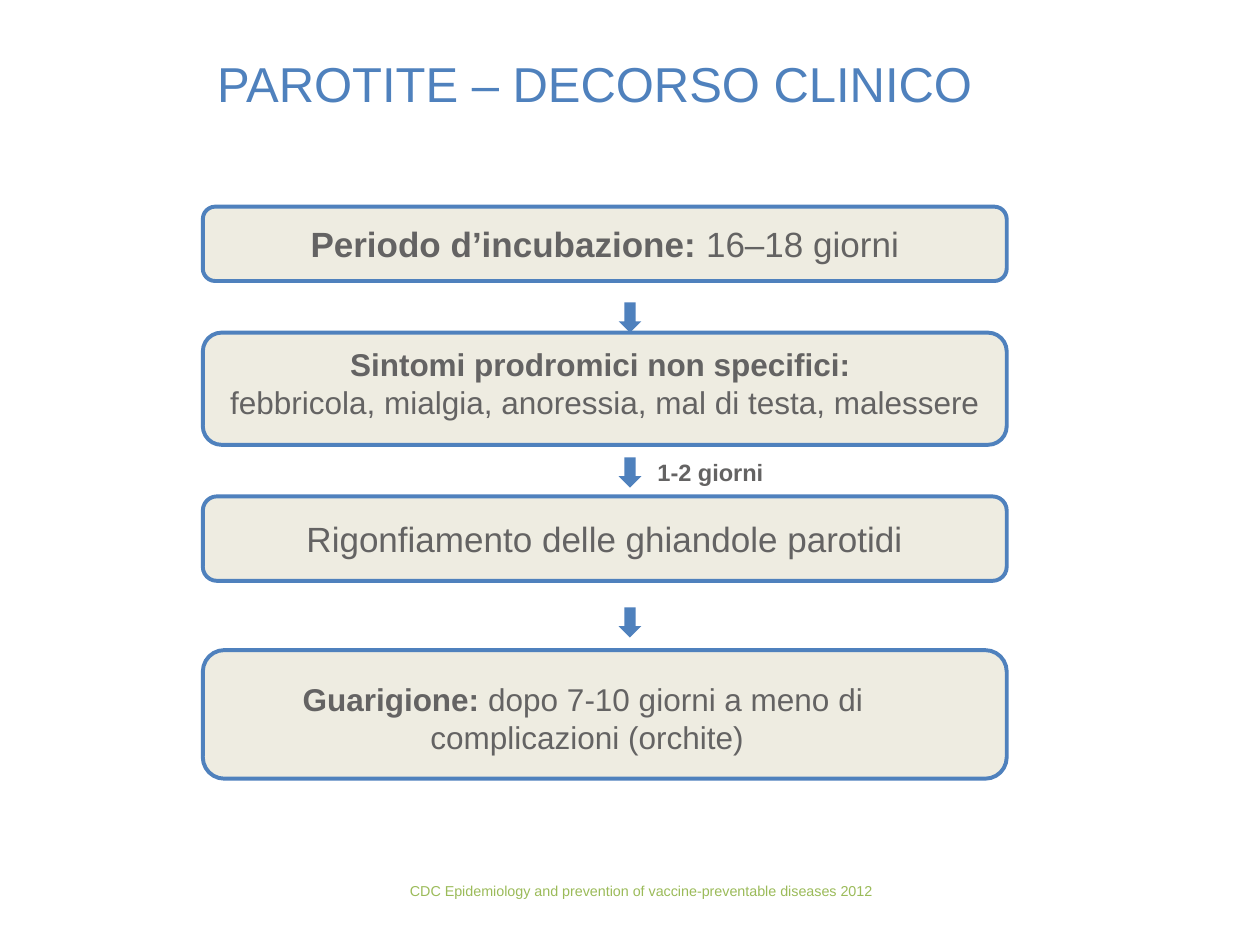
import pptx
import pptx.util
import pptx.dml.color
import pptx.enum.shapes
import pptx.enum.text

Inches, Pt = pptx.util.Inches, pptx.util.Pt
SHAPE = pptx.enum.shapes.MSO_SHAPE
ANCHOR = pptx.enum.text.MSO_ANCHOR
ALIGN = pptx.enum.text.PP_ALIGN

COLORS = {"blue": "4F81BD", "green": "9BBB59", "sand": "EEECE1", "gray": "646363"}

TITLE = "PAROTITE – DECORSO CLINICO"
SOURCE = "CDC Epidemiology and prevention of vaccine-preventable diseases 2012"
DELAY = "1-2 giorni"

# Box top and height, text left, top and height, font size, lines of (text, bold)
STAGES = [
    (1.64, 0.59, 1.76, 1.56, 0.75, 20,
     [[("Periodo d’incubazione: ", True), ("16–18 giorni", False)]]),
    (2.64, 0.89, 1.76, 2.44, 1.2, 18,
     [[("Sintomi prodromici non specifici: ", True)],
      [("febbricola, mialgia, anoressia, mal di testa, malessere", False)]]),
    (3.94, 0.67, 1.76, 3.84, 0.86, 20,
     [[("Rigonfiamento delle ghiandole parotidi", False)]]),
    (5.16, 1.02, 1.62, 5.14, 1.11, 18,
     [[("Guarigione: ", True), ("dopo 7-10 giorni a meno di ", False)],
      [("complicazioni (orchite)", False)]]),
]
BOX_LEFT, BOX_WIDTH, TEXT_WIDTH = 1.61, 6.38, 6.08
ARROW_TOPS = [2.4, 3.63, 4.82]
ARROW_MID, ARROW_WIDTH, ARROW_HEIGHT = 5, 0.18, 0.24


def color(name):
    return pptx.dml.color.RGBColor.from_string(COLORS[name])


def style(para, size, hue, align=ALIGN.CENTER):
    para.alignment = align
    para.font.name = "Arial"
    para.font.size = Pt(size)
    para.font.color.rgb = color(hue)


def add_shape(shapes, kind, area, fill):
    shape = shapes.add_shape(kind, *map(Inches, area))
    shape.shadow.inherit = False
    shape.fill.solid()
    shape.fill.fore_color.rgb = color(fill)
    shape.line.fill.background()
    return shape


def add_text(shapes, area, anchor=ANCHOR.MIDDLE, wrap=False):
    frame = shapes.add_textbox(*map(Inches, area)).text_frame
    frame.word_wrap = wrap
    frame.vertical_anchor = anchor
    return frame


def add_stage(slide, top, height, left, text_top, text_height, size, lines):
    shapes = slide.shapes.add_group_shape().shapes
    box = add_shape(shapes, SHAPE.ROUNDED_RECTANGLE,
                    (BOX_LEFT, top, BOX_WIDTH, height), "sand")
    box.line.color.rgb = color("blue")
    box.line.width = Pt(2.25)
    frame = add_text(shapes, (left, text_top, TEXT_WIDTH, text_height))
    frame.margin_left = frame.margin_right = 0
    for i, line in enumerate(lines):
        para = frame.add_paragraph() if i else frame.paragraphs[0]
        style(para, size, "gray")
        for text, bold in line:
            run = para.add_run()
            run.text = text
            run.font.bold = bold


def main():
    deck = pptx.Presentation()
    deck.slide_width, deck.slide_height = Inches(10), Inches(7.5)
    slide = deck.slides.add_slide(deck.slide_layouts[5])

    title = slide.shapes.title
    title.left, title.top = Inches(0.41), Inches(0.32)
    title.width, title.height = Inches(8.62), Inches(0.67)
    title.text_frame.text = TITLE
    title.text_frame.vertical_anchor = ANCHOR.MIDDLE
    style(title.text_frame.paragraphs[0], 28, "blue")

    source = add_text(slide.shapes, (0.78, 6.74, 8.62, 0.45), ANCHOR.BOTTOM, True)
    source.text = SOURCE
    style(source.paragraphs[0], 8.2, "green")
    source.paragraphs[0].line_spacing = Pt(9.8)

    for stage in STAGES:
        add_stage(slide, *stage)

    delay = add_text(slide.shapes, (5.12, 3.58, 1.06, 0.33))
    delay.text = DELAY
    style(delay.paragraphs[0], 13.5, "gray", ALIGN.LEFT)
    delay.paragraphs[0].font.bold = True

    for top in ARROW_TOPS:
        add_shape(slide.shapes, SHAPE.DOWN_ARROW,
                  (ARROW_MID - ARROW_WIDTH / 2, top, ARROW_WIDTH, ARROW_HEIGHT), "blue")

    deck.save("out.pptx")


if __name__ == "__main__":
    main()
